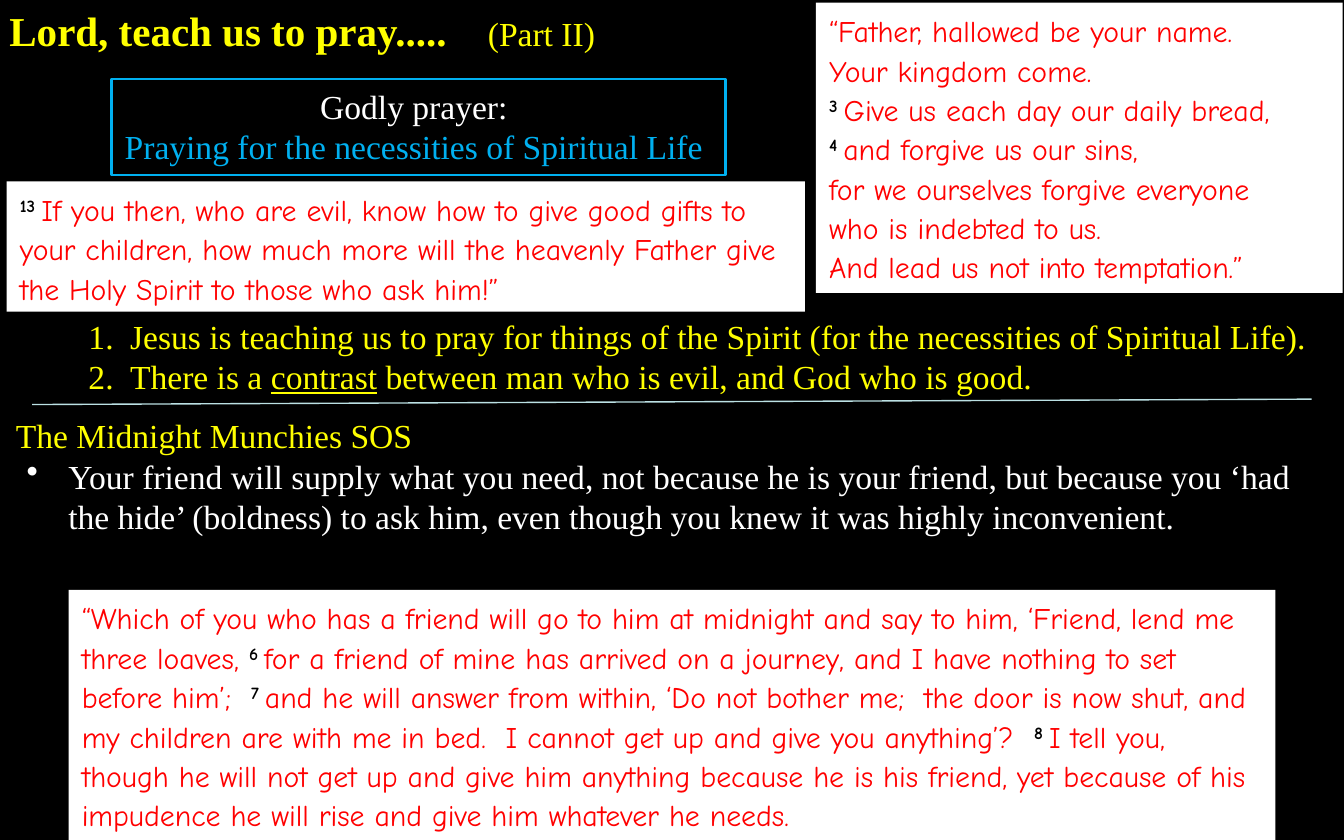
"""Build a slide on praying for the necessities of spiritual life."""
import pptx
import pptx.dml.color
import pptx.enum.shapes
import pptx.enum.text
import pptx.util
from lxml import etree
from pptx.oxml.ns import qn

Inches = pptx.util.Inches
Pt = pptx.util.Pt
RGBColor = pptx.dml.color.RGBColor
Align = pptx.enum.text.PP_ALIGN

BLACK = RGBColor(0x00, 0x00, 0x00)
WHITE = RGBColor(0xFF, 0xFF, 0xFF)
YELLOW = RGBColor(0xFF, 0xFF, 0x00)
RED = RGBColor(0xFF, 0x00, 0x00)
BLUE = RGBColor(0x00, 0xB0, 0xF0)
PALE_TEAL = RGBColor(0xBB, 0xE0, 0xE3)

BODY = {"name": "Times New Roman", "size": Pt(18), "bold": False}
VERSE = {"name": "Comic Neue", "size": Pt(16), "bold": False, "color": RED}
VERSE_NUMBER = {**VERSE, "bold": True, "color": BLACK, "baseline": "30000"}

LORDS_PRAYER = [
    "“Father, hallowed be your name.", "Your kingdom come.",
    (3, "Give us each day our daily bread,"), (4, "and forgive us our sins,"),
    "for we ourselves forgive everyone", "who is indebted to us.",
    "And lead us not into temptation.”",
]
HOLY_SPIRIT = [[
    (13, "If you then, who are evil, know how to give good gifts to your children, "
         "how much more will the heavenly Father give the Holy Spirit to those who ask him!”"),
]]
MIDNIGHT_FRIEND = [[
    "“Which of you who has a friend will go to him at midnight and say to him, "
    "‘Friend, lend me three loaves, ",
    (6, "for a friend of mine has arrived on a journey, and I have nothing to set before him’;  "),
    (7, "and he will answer from within, ‘Do not bother me;  the door is now shut, "
        "and my children are with me in bed.  I cannot get up and give you anything’?  "),
    (8, "I tell you, though he will not get up and give him anything because he is his friend, "
        "yet because of his impudence he will rise and give him whatever he needs."),
]]


class PrayerSlide:
    """Holds the style and the current slide."""

    def __init__(self, presentation):
        self.slide = presentation.slides.add_slide(presentation.slide_layouts[5])
        fill = self.slide.background.fill
        fill.solid()
        fill.fore_color.rgb = BLACK

    def run(self, paragraph, text, style):
        """Add a run and apply its format values."""
        run = paragraph.add_run()
        run.text = text
        for name, value in style.items():
            if name == "color":
                run.font.color.rgb = value
            elif name == "baseline":
                run._r.get_or_add_rPr().set(name, value)
            else:
                setattr(run.font, name, value)

    def frame(self, shape):
        """Prepare a shape's text frame."""
        frame = shape.text_frame
        formats = {"word_wrap": True, "auto_size": pptx.enum.text.MSO_AUTO_SIZE.NONE,
                   "vertical_anchor": pptx.enum.text.MSO_ANCHOR.TOP}
        for name, value in formats.items():
            setattr(frame, name, value)
        return frame

    def title(self, box, text, part, tab):
        """Fill the title, with its part number at a tab stop."""
        shape = self.slide.shapes.title
        for name, value in zip(("left", "top", "width", "height"), box):
            setattr(shape, name, Inches(value))
        paragraph = self.frame(shape).paragraphs[0]
        paragraph.alignment = Align.LEFT
        tabs = etree.SubElement(paragraph._p.get_or_add_pPr(), qn("a:tabLst"))
        etree.SubElement(tabs, qn("a:tab"), pos=str(Inches(tab)), algn="l")
        self.run(paragraph, text + "\t", {**BODY, "size": Pt(22), "bold": True, "color": YELLOW})
        self.run(paragraph, part, {**BODY, "color": YELLOW})

    def text(self, box, paragraphs, color, marker=None):
        """Add a text box, with a hanging marker where one is given."""
        shape = self.slide.shapes.add_textbox(*map(Inches, box))
        frame = self.frame(shape)
        for index, pieces in enumerate(paragraphs):
            paragraph = frame.add_paragraph() if index else frame.paragraphs[0]
            if marker:
                properties = paragraph._p.get_or_add_pPr()
                properties.set("marL", str(Inches(0.31)))
                properties.set("indent", str(-Inches(0.31)))
                tag, attributes = marker
                etree.SubElement(properties, qn(tag), attributes)
            for text, style in pieces:
                self.run(paragraph, text, {**BODY, "color": color, **style})

    def rectangle(self, box, fill=None, line=None):
        """Add a rectangle and return its text frame."""
        shape = self.slide.shapes.add_shape(
            pptx.enum.shapes.MSO_SHAPE.RECTANGLE, *map(Inches, box))
        shape.shadow.inherit = False
        for target, color in ((shape.fill, fill), (shape.line.fill, line)):
            if color is None:
                target.background()
            else:
                target.solid()
                target.fore_color.rgb = color
        if line is not None:
            shape.line.width = Pt(1.25)
        return self.frame(shape)

    def theme(self, box, lines):
        """Add the outlined theme of the talk."""
        frame = self.rectangle(box, line=BLUE)
        frame.margin_left, frame.margin_right = Inches(0.05), Inches(0.12)
        for index, (text, color) in enumerate(lines):
            paragraph = frame.add_paragraph() if index else frame.paragraphs[0]
            paragraph.alignment = Align.CENTER
            self.run(paragraph, text, {**BODY, "color": color})

    def scripture(self, box, lines):
        """Add a white panel of verses with raised verse numbers."""
        paragraph = self.rectangle(box, fill=WHITE).paragraphs[0]
        formats = {"alignment": Align.LEFT, "line_spacing": 1.1, "space_after": Pt(10)}
        for name, value in formats.items():
            setattr(paragraph, name, value)
        for index, line in enumerate(lines):
            if index:
                paragraph.add_line_break()
            for piece in line if isinstance(line, list) else [line]:
                number, text = piece if isinstance(piece, tuple) else (None, piece)
                if number:
                    self.run(paragraph, f"{number} ", VERSE_NUMBER)
                self.run(paragraph, text, VERSE)

    def divider(self, start, end):
        """Add a thin dividing line."""
        connector = self.slide.shapes.add_connector(
            pptx.enum.shapes.MSO_CONNECTOR.STRAIGHT, *map(Inches, start + end))
        connector.line.color.rgb = PALE_TEAL
        connector.line.width = Pt(0.75)
        etree.SubElement(connector._element.spPr, qn("a:effectLst"))


def main():
    """Build and save the presentation."""
    presentation = pptx.Presentation()
    presentation.slide_width, presentation.slide_height = Inches(10), Inches(6.25)
    page = PrayerSlide(presentation)
    page.title((-0.03, -0.01, 5.03, 0.47), "Lord, teach us to pray.....", "(Part II)", 3.56)
    page.text((0.56, 2.3, 9.99, 0.71), [
        [("Jesus is teaching us to pray for things of the Spirit "
          "(for the necessities of Spiritual Life).", {})],
        [("There is a ", {}), ("contrast", {"underline": True}),
         (" between man who is evil, and God who is good.", {})],
    ], YELLOW, ("a:buAutoNum", {"type": "arabicPeriod"}))
    page.theme((0.83, 0.59, 4.57, 0.71), [
        ("Godly prayer:", WHITE), ("Praying for the necessities of Spiritual Life", BLUE)])
    page.scripture((6.07, 0.02, 3.92, 2.16), LORDS_PRAYER)
    page.scripture((0.05, 1.35, 5.94, 0.97), HOLY_SPIRIT)
    page.divider((0.24, 3.01), (9.76, 2.97))
    page.text((0.02, 3.04, 3.25, 0.4), [[("The Midnight Munchies SOS", {})]], YELLOW)
    page.scripture((0.51, 4.39, 8.98, 1.86), MIDNIGHT_FRIEND)
    page.text((0.1, 3.34, 9.9, 0.71), [
        [("Your friend will supply what you need, not because he is your friend, but because "
          "you ‘had the hide’ (boldness) to ask him, even though you knew it was highly "
          "inconvenient.", {})],
    ], WHITE, ("a:buChar", {"char": "•"}))
    presentation.save("out.pptx")


if __name__ == "__main__":
    main()
